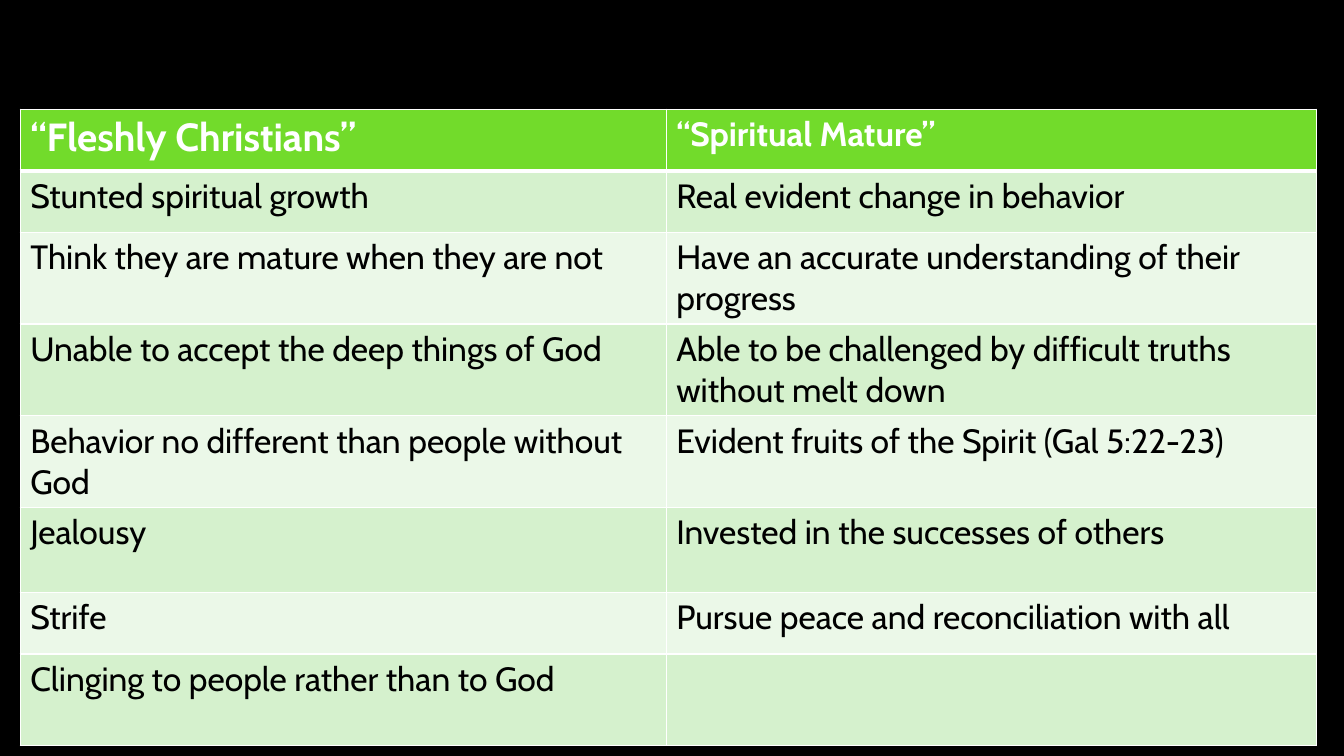
import lxml.etree
import pptx
import pptx.dml.color
import pptx.oxml.ns
import pptx.util
from pptx.util import Cm

COLORS = {
    "background": "000000",
    "header": "72DB2B",
    "odd_row": "D5F1CD",
    "even_row": "EBF8E8",
    "border": "FFFFFF",
    "header_text": "FFFFFF",
    "body_text": "000000",
}
FONT = "Cabin"
HEADINGS = [("“Fleshly Christians”", 28), ("“Spiritual Mature”", 24)]
BODY_SIZE = 24
# Row height in cm, fleshly trait, mature trait
TRAITS = [
    (1.55, "Stunted spiritual growth", "Real evident change in behavior"),
    (2.31, "Think they are mature when they are not",
     "Have an accurate understanding of their progress"),
    (2.31, "Unable to accept the deep things of God",
     "Able to be challenged by difficult truths without melt down"),
    (2.31, "Behavior no different than people without God",
     "Evident fruits of the Spirit (Gal 5:22-23)"),
    (2.14, "Jealousy", "Invested in the successes of others"),
    (1.55, "Strife", "Pursue peace and reconciliation with all"),
    (2.31, "Clinging to people rather than to God", ""),
]
HEADER_HEIGHT = 1.55


def rgb(name):
    return pptx.dml.color.RGBColor.from_string(COLORS[name])


def set_borders(cell, widths):
    """Draw cell borders; widths maps an edge letter (L, R, T, B) to points."""
    qn = pptx.oxml.ns.qn
    properties = cell._tc.get_or_add_tcPr()
    for position, (edge, width) in enumerate(widths.items()):
        line = lxml.etree.Element(qn("a:ln" + edge), w=str(pptx.util.Pt(width)))
        fill = lxml.etree.SubElement(line, qn("a:solidFill"))
        lxml.etree.SubElement(fill, qn("a:srgbClr"), val=COLORS["border"])
        properties.insert(position, line)


def fill_cell(cell, text, size, fill, text_color, bold, top=1, bottom=1):
    cell.fill.solid()
    cell.fill.fore_color.rgb = rgb(fill)
    set_borders(cell, {"L": 1, "R": 1, "T": top, "B": bottom})
    if text:
        run = cell.text_frame.paragraphs[0].add_run()
        run.text = text
        run.font.name = FONT
        run.font.size = pptx.util.Pt(size)
        run.font.bold = bold
        run.font.color.rgb = rgb(text_color)


def add_comparison(slide, left, top, width):
    heights = [HEADER_HEIGHT] + [height for height, *_ in TRAITS]
    comparison = slide.shapes.add_table(
        len(heights), len(HEADINGS), left, top, width, Cm(sum(heights))).table
    comparison.columns[0].width = Cm(16.28)
    comparison.columns[1].width = width - Cm(16.28)
    for row, height in zip(comparison.rows, heights):
        row.height = Cm(height)

    for column, (heading, size) in enumerate(HEADINGS):
        fill_cell(comparison.cell(0, column), heading, size,
                  "header", "header_text", True, bottom=3)
    for number, (_, *traits) in enumerate(TRAITS, start=1):
        band = "odd_row" if number % 2 else "even_row"
        for column, trait in enumerate(traits):
            fill_cell(comparison.cell(number, column), trait, BODY_SIZE,
                      band, "body_text", False, top=3 if number == 1 else 1)


def main():
    deck = pptx.Presentation()
    deck.slide_width = Cm(33.87)
    deck.slide_height = Cm(19.05)
    slide = deck.slides.add_slide(deck.slide_layouts[6])
    slide.background.fill.solid()
    slide.background.fill.fore_color.rgb = rgb("background")
    add_comparison(slide, Cm(0.51), Cm(2.75), Cm(32.66))
    deck.save("out.pptx")


if __name__ == "__main__":
    main()
